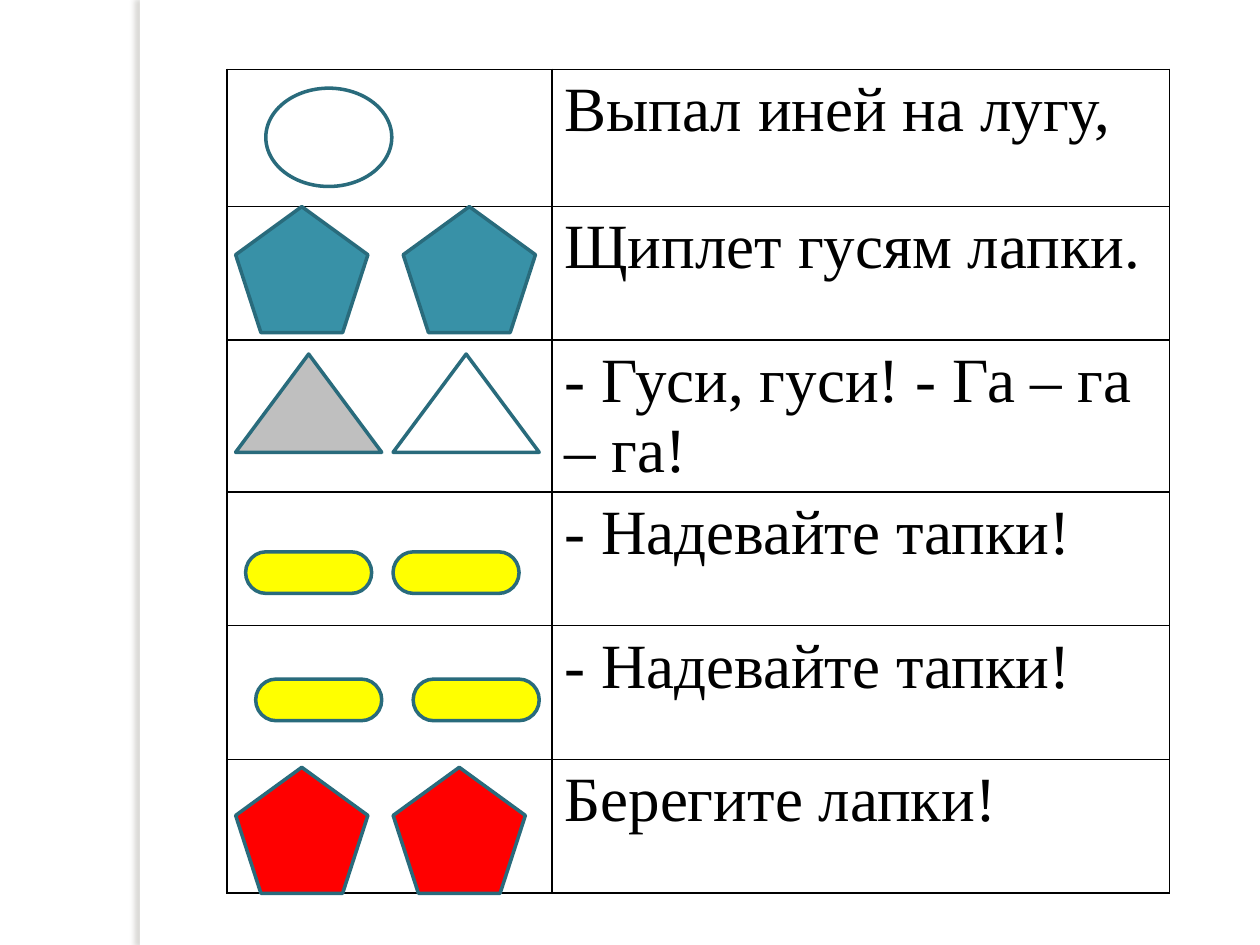
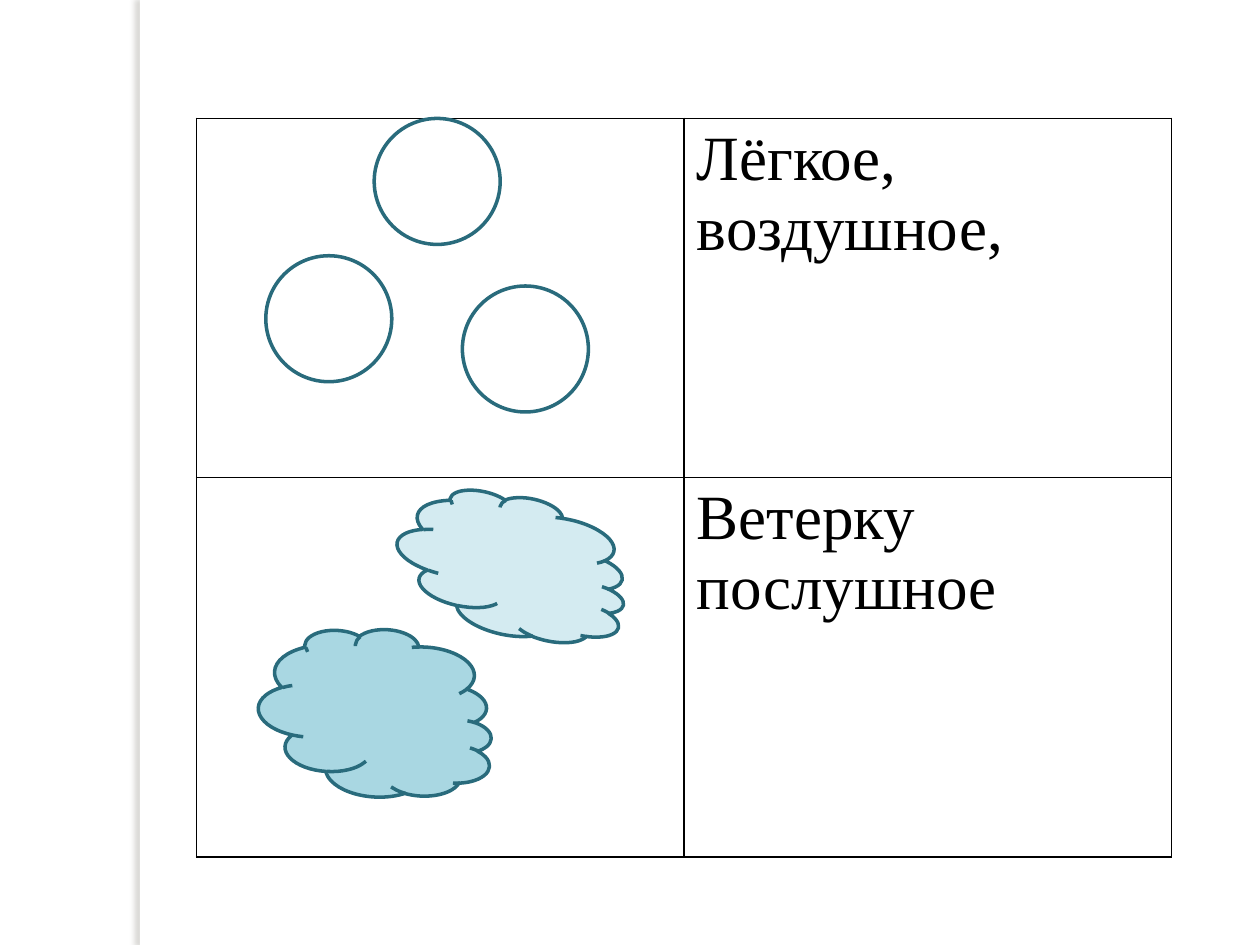
from dataclasses import dataclass

from lxml import etree
from pptx import Presentation
from pptx.dml.color import RGBColor
from pptx.enum import shapes
from pptx.oxml import ns
from pptx.util import Inches, Pt

KIND = shapes.MSO_SHAPE


@dataclass(frozen=True)
class Theme:
    """Colours, type and line sizes shared by the slides."""

    font: str = "Times New Roman"
    text_size: int = 36
    text: str = "000000"
    paper: str = "FFFFFF"
    shadow: str = "736F63"
    outline: str = "296B7C"
    outline_width: int = 2
    border_width: int = 1
    teal: str = "3891A7"
    grey: str = "BFBFBF"
    yellow: str = "FFFF00"
    red: str = "FF0000"
    light_cloud: str = "D4EBF1"
    dark_cloud: str = "A9D7E2"


THEME = Theme()


def add_child(parent, tag, **attributes):
    """Append a drawing element with the given attributes."""
    child = etree.SubElement(parent, ns.qn(tag))
    for name, value in attributes.items():
        child.set(name, str(value))
    return child


def add_figure(slide, kind, left, top, width, height, fill=None, rotation=0):
    """Draw one outlined symbol, hollow unless a fill is given."""
    shape = slide.shapes.add_shape(
        kind, Inches(left), Inches(top), Inches(width), Inches(height))
    shape.shadow.inherit = False
    shape.rotation = rotation
    if fill:
        shape.fill.solid()
        shape.fill.fore_color.rgb = RGBColor.from_string(fill)
    else:
        shape.fill.background()
    shape.line.color.rgb = RGBColor.from_string(THEME.outline)
    shape.line.width = Pt(THEME.outline_width)
    return shape


def add_figures(slide, kind, lefts, top, width, height, fill=None):
    """Draw a row of equal symbols."""
    for left in lefts:
        add_figure(slide, kind, left, top, width, height, fill)


def add_side_strip(slide):
    """Draw the white strip that casts a shadow to the left."""
    strip = add_figure(slide, KIND.RECTANGLE, 1.11, 0, 0.08, 7.5, THEME.paper)
    strip.line.fill.background()
    effects = strip._element.spPr.find(ns.qn("a:effectLst"))
    shadow = add_child(effects, "a:outerShdw", blurRad=Pt(3), dist=Pt(3),
                       dir=180 * 60000, algn="tl", rotWithShape=0)
    color = add_child(shadow, "a:srgbClr", val=THEME.shadow)
    add_child(color, "a:alpha", val=25000)


def format_cell(cell):
    """Give a cell thin borders on all sides and no fill."""
    properties = cell._tc.get_or_add_tcPr()
    for side in ("L", "R", "T", "B"):
        border = add_child(properties, f"a:ln{side}", w=Pt(THEME.border_width))
        fill = add_child(border, "a:solidFill")
        add_child(fill, "a:srgbClr", val=THEME.text)
    cell.fill.background()


def add_verse_table(slide, left, top, widths, heights, lines):
    """Add a table with room for symbols on the left and verse on the right."""
    table = slide.shapes.add_table(
        len(lines), len(widths), Inches(left), Inches(top),
        Inches(sum(widths)), Inches(sum(heights))).table
    table.first_row = False
    table.horz_banding = False
    for column, width in zip(table.columns, widths):
        column.width = Inches(width)
    for row, height, line in zip(table.rows, heights, lines):
        row.height = Inches(height)
        for cell in row.cells:
            format_cell(cell)
        run = row.cells[1].text_frame.paragraphs[0].add_run()
        run.text = line
        run.font.name = THEME.font
        run.font.size = Pt(THEME.text_size)
        run.font.color.rgb = RGBColor.from_string(THEME.text)


def add_verse_slide(presentation):
    """Add a blank slide with the side strip."""
    slide = presentation.slides.add_slide(presentation.slide_layouts[6])
    add_side_strip(slide)
    return slide


def build_geese(presentation):
    """Build the verse about geese."""
    slide = add_verse_slide(presentation)
    add_verse_table(slide, 1.8, 0.55, [2.58, 4.9], [1.09] + [1.06] * 5, [
        "Выпал иней на лугу,",
        "Щиплет гусям лапки.",
        "- Гуси, гуси! - Га – га – га!",
        "- Надевайте тапки!",
        "- Надевайте тапки!",
        "Берегите лапки!",
    ])
    paw, goose, slipper = (
        KIND.REGULAR_PENTAGON, KIND.ISOSCELES_TRIANGLE, KIND.FLOWCHART_TERMINATOR)
    add_figure(slide, KIND.OVAL, 2.11, 0.7, 1, 0.78)
    add_figures(slide, paw, [1.87, 3.2], 1.64, 1.05, 1, THEME.teal)
    add_figure(slide, goose, 1.87, 2.81, 1.16, 0.78, THEME.grey)
    add_figure(slide, goose, 3.12, 2.81, 1.16, 0.78)
    add_figures(slide, slipper, [1.95, 3.12], 4.38, 1, 0.33, THEME.yellow)
    add_figures(slide, slipper, [2.03, 3.28], 5.39, 1, 0.33, THEME.yellow)
    add_figures(slide, paw, [1.87, 3.12], 6.09, 1.05, 1, THEME.red)


def build_cloud(presentation):
    """Build the verse about the light, airy cloud."""
    slide = add_verse_slide(presentation)
    add_verse_table(slide, 1.56, 0.94, [3.87, 3.87], [2.85, 3.01], [
        "Лёгкое, воздушное,",
        "Ветерку послушное",
    ])
    for left, top in [(3.67, 2.27), (2.11, 2.03), (2.97, 0.94)]:
        add_figure(slide, KIND.OVAL, left, top, 1, 1)
    add_figure(slide, KIND.CLOUD, 3.52, 3.56, 1.1, 1.86, THEME.light_cloud, 102.2)
    add_figure(slide, KIND.CLOUD, 2.32, 4.73, 1.33, 1.86, THEME.dark_cloud, 93.5)


def main():
    """Build and save the presentation."""
    presentation = Presentation()
    presentation.slide_width = Inches(10)
    presentation.slide_height = Inches(7.5)
    build_geese(presentation)
    build_cloud(presentation)
    presentation.save("out.pptx")


if __name__ == "__main__":
    main()
